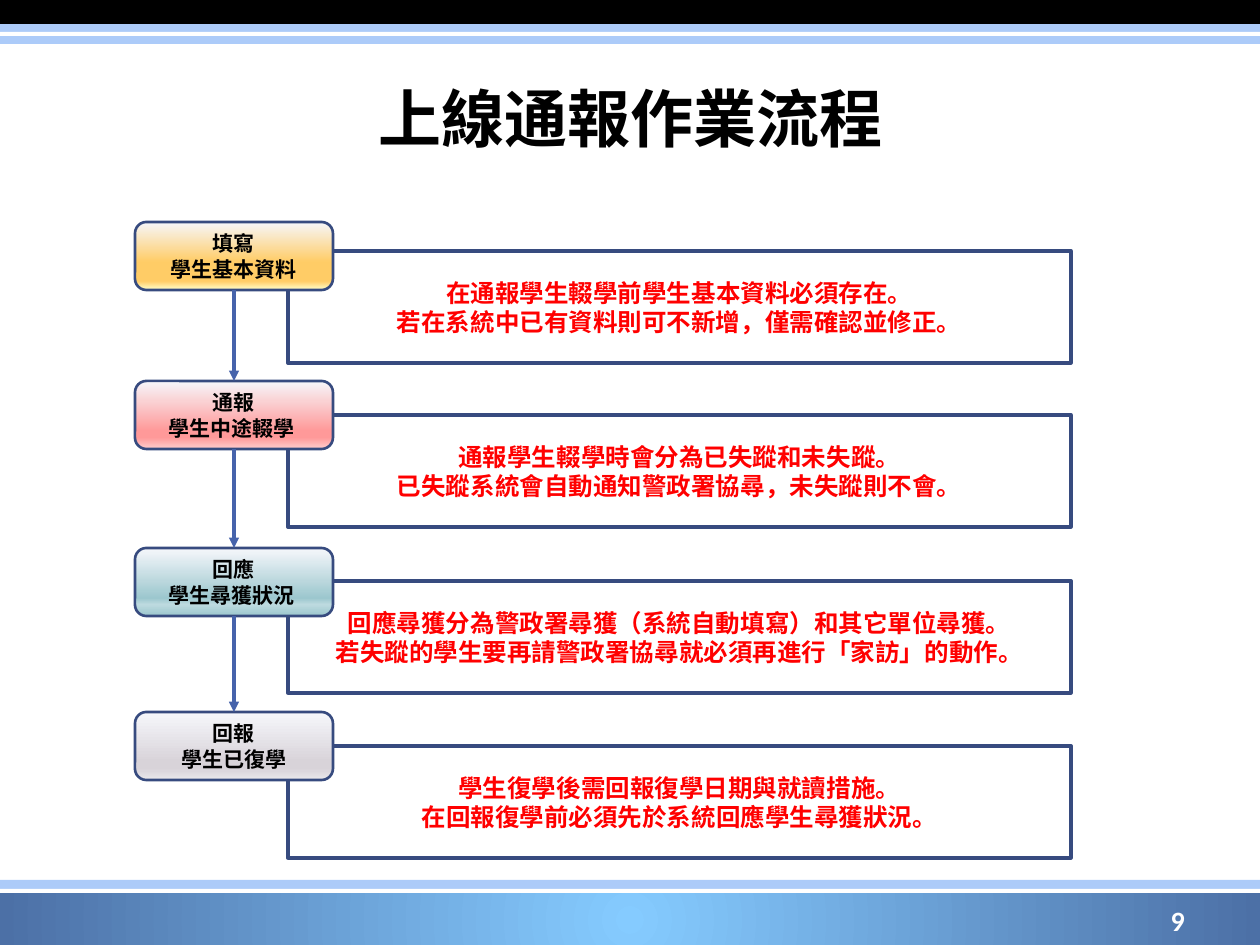
from dataclasses import dataclass

from lxml.etree import SubElement
from pptx import Presentation
from pptx.dml.color import RGBColor
from pptx.enum.shapes import MSO_CONNECTOR as Connector, MSO_SHAPE as Shape
from pptx.enum.text import MSO_ANCHOR as Anchor, PP_ALIGN as Align
from pptx.oxml.ns import qn
from pptx.util import Emu, Pt


@dataclass(frozen=True)
class Theme:
    """Colours, fonts and type sizes of the deck."""
    black: str = "000000"
    white: str = "FFFFFF"
    pale_blue: str = "ACCBF9"
    outline: str = "374B7F"
    arrow: str = "4663AB"
    warning: str = "FF0000"
    footer: tuple = ((0, "85CBFF"), (100, "4C70A6"))
    cjk_font: str = "Noto Sans CJK SC"
    title_font: str = "Karla"
    number_font: str = "Calibri"
    title_size: int = 36
    number_size: int = 16
    note_size: int = 14
    label_size: int = 12
    line_factor: float = 1.22


THEME = Theme()
PX_PER_INCH = 126
SLIDE_WIDTH, SLIDE_HEIGHT = 1260, 945
LABEL_WIDTH, LABEL_HEIGHT = 198, 68
NOTE_INDENT, NOTE_WIDTH, NOTE_HEIGHT = 153, 783, 112

STEPS = (
    (0, 29, ((0, "F6F7FB"), (59, "FFCC66"), (87, "FFCC66"), (100, "FFFFCC")),
     ("填寫", "學生基本資料"),
     ("在通報學生輟學前學生基本資料必須存在。",
      "若在系統中已有資料則可不新增，僅需確認並修正。")),
    (159, 193, ((0, "F6F7FB"), (74, "FF9999"), (83, "FF9999"), (100, "FFCCCC")),
     ("通報", "學生中途輟學 "),
     ("通報學生輟學時會分為已失蹤和未失蹤。",
      "已失蹤系統會自動通知警政署協尋，未失蹤則不會。")),
    (326, 359, ((0, "F6F7FB"), (74, "9CC7CE"), (83, "BDDADF"), (100, "9CC7CE")),
     ("回應", "學生尋獲狀況 "),
     ("回應尋獲分為警政署尋獲（系統自動填寫）和其它單位尋獲。",
      "若失蹤的學生要再請警政署協尋就必須再進行「家訪」的動作。")),
    (490, 524, ((0, "F6F7FB"), (74, "D8D3D9"), (83, "D8D3D9"), (100, "EBE9EC")),
     ("回報", "學生已復學"),
     ("學生復學後需回報復學日期與就讀措施。",
      "在回報復學前必須先於系統回應學生尋獲狀況。")),
)


def px(value):
    """Turn px into EMU."""
    return Emu(round(value * 914400 / PX_PER_INCH))


def color(value):
    """Turn a hex string into a colour."""
    return RGBColor.from_string(value)


def write_lines(frame, lines, size, font, ink, align=Align.CENTER, spacing=None):
    """Write one bold paragraph for each line, centred vertically."""
    frame.word_wrap = True
    frame.vertical_anchor = Anchor.MIDDLE
    for index, line in enumerate(lines):
        paragraph = frame.paragraphs[0] if index == 0 else frame.add_paragraph()
        paragraph.alignment = align
        if spacing:
            paragraph.line_spacing = Pt(round(size * spacing, 1))
        run = paragraph.add_run()
        run.text = line
        run.font.size = Pt(size)
        run.font.bold = True
        run.font.name = font
        run.font.color.rgb = color(ink)
        east_asian = SubElement(run.font._element, qn("a:ea"))
        east_asian.set("typeface", THEME.cjk_font)


def fill_gradient(shape, stops, radial=False):
    """Fill a shape with a downward or a radial gradient."""
    shape.fill.gradient()
    gradient = shape._element.spPr.find(qn("a:gradFill"))
    for child in list(gradient):
        gradient.remove(child)
    stop_list = SubElement(gradient, qn("a:gsLst"))
    for position, value in stops:
        stop = SubElement(stop_list, qn("a:gs"), pos=str(position * 1000))
        SubElement(stop, qn("a:srgbClr"), val=value)
    if radial:
        direction = SubElement(gradient, qn("a:path"), path="circle")
        SubElement(direction, qn("a:fillToRect"),
                   {side: "50000" for side in "ltrb"})
    else:
        SubElement(gradient, qn("a:lin"), ang="5400000", scaled="0")


def add_block(slide, kind, box, fill=None, line_width=None):
    """Add a preset shape with an optional solid fill and outline."""
    shape = slide.shapes.add_shape(kind, *map(px, box))
    shape.shadow.inherit = False
    if fill:
        shape.fill.solid()
        shape.fill.fore_color.rgb = color(fill)
    if line_width:
        shape.line.color.rgb = color(THEME.outline)
        shape.line.width = Pt(line_width)
    else:
        shape.line.fill.background()
    return shape


def add_header(slide, left, top, width):
    """Draw the striped band at the top."""
    for offset, height, fill in ((0, 24, THEME.black), (24, 20, THEME.pale_blue),
                                 (32, 4, THEME.white)):
        add_block(slide, Shape.RECTANGLE, (left, top + offset, width, height), fill)


def add_footer(slide, left, top, width, number):
    """Draw the band at the bottom with the slide number."""
    band = add_block(slide, Shape.RECTANGLE, (left, top + 11, width, 58))
    fill_gradient(band, THEME.footer, radial=True)
    for offset, height, fill in ((0, 12, THEME.pale_blue), (9, 4, THEME.white)):
        add_block(slide, Shape.RECTANGLE, (left, top + offset, width, height), fill)
    box = (left + width - 357, top + 15, 294, 50)
    text_box = slide.shapes.add_textbox(*map(px, box))
    write_lines(text_box.text_frame, [number], THEME.number_size,
                THEME.number_font, THEME.white, Align.RIGHT)


def add_title(slide, left, top, width, height, text):
    """Place and format the title placeholder."""
    title = slide.shapes.title
    title.left, title.top, title.width, title.height = map(
        px, (left, top, width, height))
    write_lines(title.text_frame, [text], THEME.title_size,
                THEME.title_font, THEME.black)


def add_note(slide, left, top, lines):
    """Add one outlined explanation."""
    note = add_block(slide, Shape.RECTANGLE, (left, top, NOTE_WIDTH, NOTE_HEIGHT),
                     THEME.white, 2)
    write_lines(note.text_frame, lines, THEME.note_size, THEME.cjk_font,
                THEME.warning, spacing=THEME.line_factor)


def add_label(slide, left, top, stops, lines):
    """Add one rounded step label."""
    label = add_block(slide, Shape.ROUNDED_RECTANGLE,
                      (left, top, LABEL_WIDTH, LABEL_HEIGHT), line_width=1.5)
    fill_gradient(label, stops)
    write_lines(label.text_frame, lines, THEME.label_size, THEME.cjk_font,
                THEME.black, spacing=THEME.line_factor)
    return label


def add_arrow(slide, upper, lower):
    """Join two step labels with a downward arrow."""
    arrow = slide.shapes.add_connector(Connector.STRAIGHT, 0, 0, 0, 0)
    arrow.begin_connect(upper, 2)
    arrow.end_connect(lower, 0)
    arrow.line.color.rgb = color(THEME.arrow)
    arrow.line.width = Pt(1.75)
    SubElement(arrow.line._get_or_add_ln(), qn("a:tailEnd"), type="triangle")
    SubElement(arrow._element.spPr, qn("a:effectLst"))


def add_flow(slide, left, top):
    """Lay out the notes, the step labels and the arrows."""
    for _, note_top, _, _, note_lines in reversed(STEPS):
        add_note(slide, left + NOTE_INDENT, top + note_top, note_lines)
    labels = [add_label(slide, left, top + label_top, stops, label_lines)
              for label_top, _, stops, label_lines, _ in STEPS]
    for upper, lower in zip(labels, labels[1:]):
        add_arrow(slide, upper, lower)


def main():
    """Build and save the presentation."""
    presentation = Presentation()
    presentation.slide_width = px(SLIDE_WIDTH)
    presentation.slide_height = px(SLIDE_HEIGHT)
    slide = presentation.slides.add_slide(presentation.slide_layouts[5])
    add_header(slide, 0, 0, SLIDE_WIDTH)
    add_footer(slide, 0, 880, SLIDE_WIDTH, "9")
    add_title(slide, 63, 38, 1134, 158, "上線通報作業流程")
    add_flow(slide, 135, 222)
    presentation.save("out.pptx")


if __name__ == "__main__":
    main()
